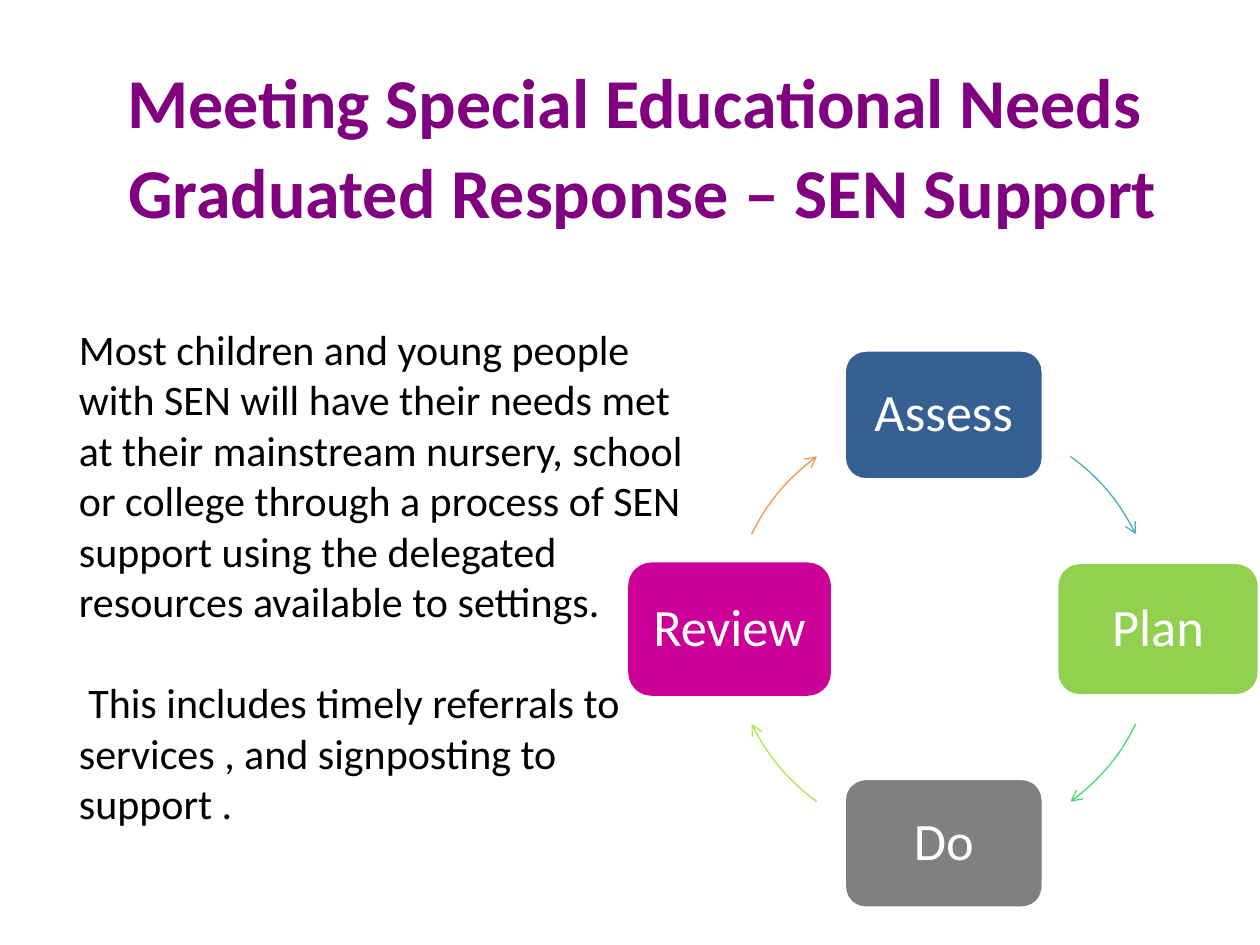
import dataclasses
import math

import lxml.etree
import pptx
import pptx.dml.color
import pptx.enum.shapes
import pptx.enum.text
import pptx.oxml.ns
import pptx.util

Pt = pptx.util.Pt
Shape = pptx.enum.shapes.MSO_SHAPE
Align = pptx.enum.text.PP_ALIGN
Anchor = pptx.enum.text.MSO_ANCHOR
qn = pptx.oxml.ns.qn


@dataclasses.dataclass(frozen=True)
class Theme:
    font: str = "Calibri"
    title: str = "800080"
    body: str = "000000"
    white: str = "FFFFFF"
    blue: str = "376092"
    green: str = "92D050"
    grey: str = "808080"
    pink: str = "CC0099"
    arrows: tuple = ("4BACC6", "47D872", "ACE946", "F79646")
    head_size: int = 40
    step_size: int = 30
    body_size: int = 24


def color(code):
    return pptx.dml.color.RGBColor.from_string(code)


def write(frame, text, *, font, size, ink, bold=False, align=Align.LEFT,
          space=None, left=0, first=0, before=0):
    lead = frame.paragraphs[0]
    para = frame.add_paragraph() if lead.runs else lead
    para.alignment = align
    para.line_spacing = space
    para.space_before = Pt(before)
    props = para._p.get_or_add_pPr()
    props.set("marL", str(Pt(left)))
    props.set("indent", str(Pt(first)))
    run = para.add_run()
    run.text = text
    run.font.name = font
    run.font.size = Pt(size)
    run.font.bold = bold
    run.font.color.rgb = color(ink)


class Painter:
    def __init__(self, slide, theme):
        self.slide = slide
        self.theme = theme

    def text(self, left, top, width, height):
        box = self.slide.shapes.add_textbox(Pt(left), Pt(top), Pt(width), Pt(height))
        box.text_frame.word_wrap = True
        return box.text_frame

    def step(self, label, mid_x, mid_y, width, height, fill, edge):
        box = self.slide.shapes.add_shape(
            Shape.ROUNDED_RECTANGLE, Pt(mid_x - width / 2), Pt(mid_y - height / 2),
            Pt(width), Pt(height))
        box.shadow.inherit = False
        box.fill.solid()
        box.fill.fore_color.rgb = color(fill)
        if edge:
            box.line.color.rgb = color(edge)
            box.line.width = Pt(2)
        else:
            box.line.fill.background()
        frame = box.text_frame
        frame.word_wrap = True
        frame.vertical_anchor = Anchor.MIDDLE
        write(frame, label, font=self.theme.font, size=self.theme.step_size,
              ink=self.theme.white, align=Align.CENTER, space=0.9)

    def arc(self, mid_x, mid_y, radius, start, end, ink):
        left, top = mid_x - radius, mid_y - radius
        frame = self.slide.shapes.build_freeform(Pt(left), Pt(top))
        frame.add_line_segments(
            [(Pt(left + 2 * radius), Pt(top + 2 * radius))], close=False)
        curve = frame.convert_to_shape()
        curve.shadow.inherit = False
        curve.fill.background()
        curve.line.color.rgb = color(ink)
        curve.line.width = Pt(0.75)
        props = curve._element.spPr
        lxml.etree.SubElement(props.find(qn("a:ln")), qn("a:tailEnd"), type="arrow")

        begin, stop = math.radians(start), math.radians(end)
        pull = 4 / 3 * math.tan((stop - begin) / 4)

        def spot(turn, lean):
            across = math.sin(turn) + lean * math.cos(turn)
            down = lean * math.sin(turn) - math.cos(turn)
            return radius * (1 + across), radius * (1 + down)

        track = props.find(".//" + qn("a:path"))
        for child in list(track):
            track.remove(child)
        moves = (
            ("a:moveTo", [spot(begin, 0)]),
            ("a:cubicBezTo", [spot(begin, pull), spot(stop, -pull), spot(stop, 0)]),
        )
        for name, spots in moves:
            move = lxml.etree.SubElement(track, qn(name))
            for x, y in spots:
                lxml.etree.SubElement(move, qn("a:pt"), x=str(Pt(x)), y=str(Pt(y)))


def main():
    deck = pptx.Presentation()
    deck.slide_width, deck.slide_height = Pt(720), Pt(540)
    theme = Theme()
    paint = Painter(deck.slides.add_slide(deck.slide_layouts[6]), theme)

    mid_x, mid_y, radius = 539.3, 359.5, 122.4
    steps = (
        ("Assess", theme.blue, theme.white),
        ("Plan", theme.green, None),
        ("Do", theme.grey, theme.white),
        ("Review", theme.pink, theme.pink),
    )
    for spot, ((label, fill, edge), ink) in enumerate(zip(steps, theme.arrows)):
        angle = 90 * spot
        turn = math.radians(angle)
        paint.step(label, mid_x + radius * math.sin(turn),
                   mid_y - radius * math.cos(turn), 113.8, 74.2, fill, edge)
        gap = 36.3 if spot % 2 == 0 else 26.3
        paint.arc(mid_x, mid_y, radius, angle + gap, angle + gap + 27.4, ink)

    title = paint.text(15.4, 26.8, 703.5, 111)
    for line in ("Meeting Special Educational Needs ",
                 "Graduated Response – SEN Support"):
        write(title, line, font=theme.font, size=theme.head_size, ink=theme.title,
              bold=True, align=Align.CENTER, space=1.07, left=35.3, first=-35.3)

    body = paint.text(38, 181.3, 360, 300)
    style = dict(font=theme.font, size=theme.body_size, ink=theme.body)
    write(body, "Most children and young people with SEN will have their needs met "
          "at their mainstream nursery, school or college through a process of SEN "
          "support using the delegated resources available to settings.", **style)
    write(body, "This includes timely referrals to services , and signposting to "
          "support .", before=29, first=5.4, **style)

    deck.save("out.pptx")


if __name__ == "__main__":
    main()
